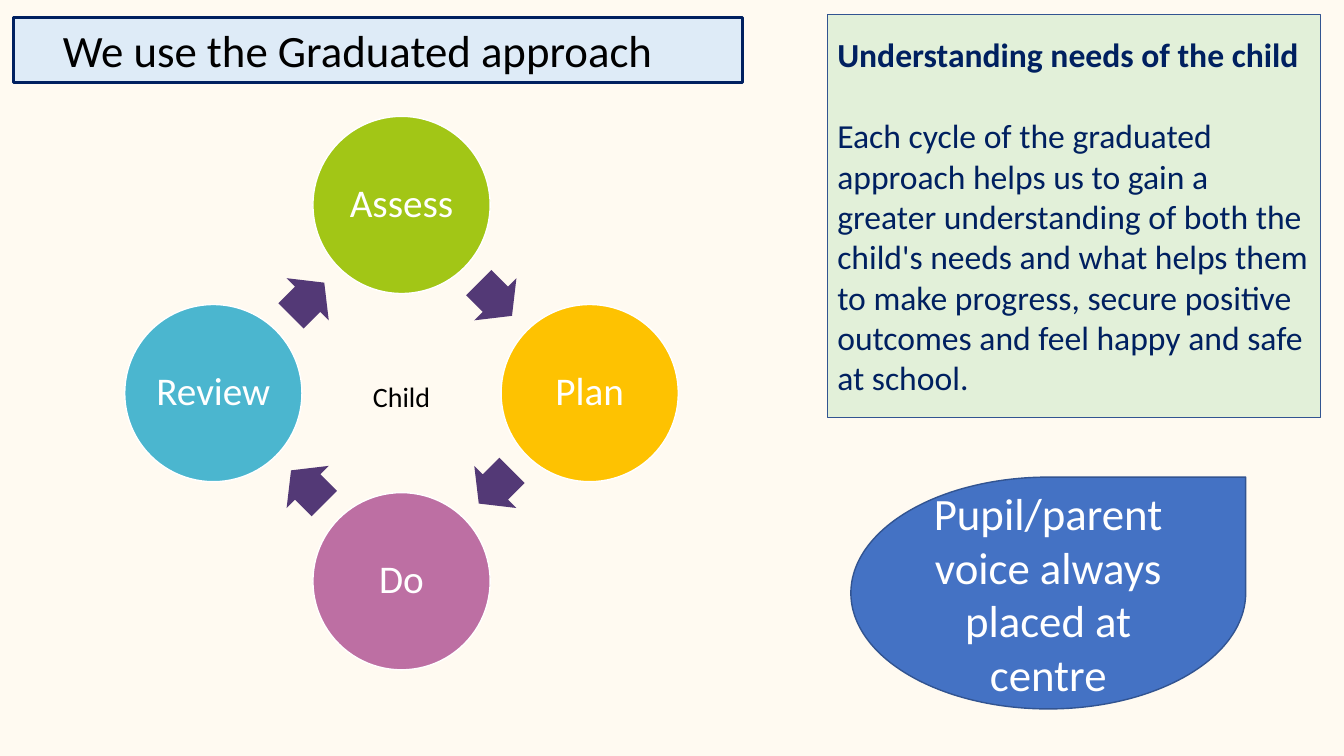
from math import cos, radians, sin

from pptx import Presentation
from pptx.dml.color import RGBColor
from pptx.enum.shapes import MSO_SHAPE
from pptx.enum.text import MSO_ANCHOR, PP_ALIGN
from pptx.util import Inches, Pt

HUES = {
    "cream": "FFFAF1", "sky": "DEEBF7", "navy": "002060", "mint": "E2F0D9",
    "edge": "325491", "blue": "4472C4", "white": "FFFFFF", "black": "000000",
    "lime": "A2C616", "gold": "FEC201", "pink": "BD6FA3", "teal": "4BB6CF",
    "plum": "533976",
}
COLS, ROWS = 160, 90  # square cells, 12 to the inch


class Deck:
    font = "Calibri"

    def __init__(self):
        self.prs = Presentation()
        self.prs.slide_width, self.prs.slide_height = Inches(13.33), Inches(7.5)
        self.slide = self.prs.slides.add_slide(self.prs.slide_layouts[5])
        back = self.slide.background.fill
        back.solid()
        back.fore_color.rgb = self.hue("cream")

    def hue(self, name):
        return RGBColor.from_string(HUES[name])

    def grid(self, left, top, width, height):
        col, row = self.prs.slide_width / COLS, self.prs.slide_height / ROWS
        return [round(n) for n in (left * col, top * row, width * col, height * row)]

    def paint(self, shape, fill, line=None, weight=1):
        shape.fill.solid()
        shape.fill.fore_color.rgb = self.hue(fill)
        if line:
            shape.line.color.rgb = self.hue(line)
            shape.line.width = Pt(weight)
        else:
            shape.line.fill.background()

    def letter(self, shape, text, size, color, align=PP_ALIGN.CENTER):
        frame = shape.text_frame
        frame.text = text
        frame.word_wrap = True
        frame.vertical_anchor = MSO_ANCHOR.MIDDLE
        for para in frame.paragraphs:
            para.alignment = align
            for run in para.runs:
                run.font.name, run.font.size = self.font, Pt(size)
                run.font.color.rgb = self.hue(color)
        return frame

    def title(self, box, text):
        shape = self.slide.shapes.title
        shape.left, shape.top, shape.width, shape.height = self.grid(*box)
        self.paint(shape, "sky", "navy", 1.75)
        frame = self.letter(shape, text, 32, "black")
        frame.margin_right = Inches(0.5)

    def shape(self, kind, box, fill, line=None):
        shape = self.slide.shapes.add_shape(kind, *self.grid(*box))
        shape.shadow.inherit = False
        self.paint(shape, fill, line)
        return shape

    def label(self, box, text, size, color):
        self.letter(self.slide.shapes.add_textbox(*self.grid(*box)), text, size, color)

    def panel(self, box, head, body):
        shape = self.shape(MSO_SHAPE.RECTANGLE, box, "mint", "edge")
        frame = self.letter(shape, f"{head}\n{body}", 24, "navy", PP_ALIGN.LEFT)
        first, last = frame.paragraphs
        first.runs[0].font.bold = True
        last.space_before = Pt(29)

    def disc(self, mid, size, text, fill):
        box = (mid[0] - size / 2, mid[1] - size / 2, size, size)
        shape = self.shape(MSO_SHAPE.OVAL, box, fill, "white")
        frame = self.letter(shape, text, 28, "white")
        frame.margin_left = frame.margin_right = Inches(0.04)
        frame.margin_top = frame.margin_bottom = Inches(0.04)
        frame.paragraphs[0].line_spacing = 0.9

    def arrow(self, mid, width, height, turn):
        box = (mid[0] - width / 2, mid[1] - height / 2, width, height)
        shape = self.shape(MSO_SHAPE.RIGHT_ARROW, box, "plum")
        shape.adjustments[0], shape.adjustments[1] = 0.6, 0.5
        shape.rotation = turn

    def cycle(self, mid, steps):
        def orbit(reach, angle):
            turn = radians(angle)
            return mid[0] + reach * cos(turn), mid[1] + reach * sin(turn)

        # Clockwise from the top, an arrow halfway to the next disc
        gap = 360 / len(steps)
        for i, (text, fill) in enumerate(steps):
            angle = i * gap - 90
            self.disc(orbit(22.4, angle), 21.1, text, fill)
            self.arrow(orbit(15.8, angle + gap / 2), 5.6, 7.1, (i + 0.5) * gap)


def main():
    deck = Deck()

    # Heading
    deck.title((1.6, 2.1, 86.8, 7.7), "We use the Graduated approach")

    # Explanation and pupil voice
    deck.panel(
        (98.5, 1.7, 58.7, 48), "Understanding needs of the child",
        "Each cycle of the graduated approach helps us to gain a greater "
        "understanding of both the child's needs and what helps them to make "
        "progress, secure positive outcomes and feel happy and safe at school.")
    voice = deck.shape(MSO_SHAPE.TEAR, (101.3, 56.8, 47, 27.6), "blue", "edge")
    deck.letter(voice, "Pupil/parent voice always placed at centre", 32, "white")

    # Cycle around the child
    deck.cycle((47.8, 46.8), [("Assess", "lime"), ("Plan", "gold"),
                              ("Do", "pink"), ("Review", "teal")])
    deck.label((36.4, 44.5, 22.8, 5.3), "Child", 20, "black")

    deck.prs.save("out.pptx")


if __name__ == "__main__":
    main()
